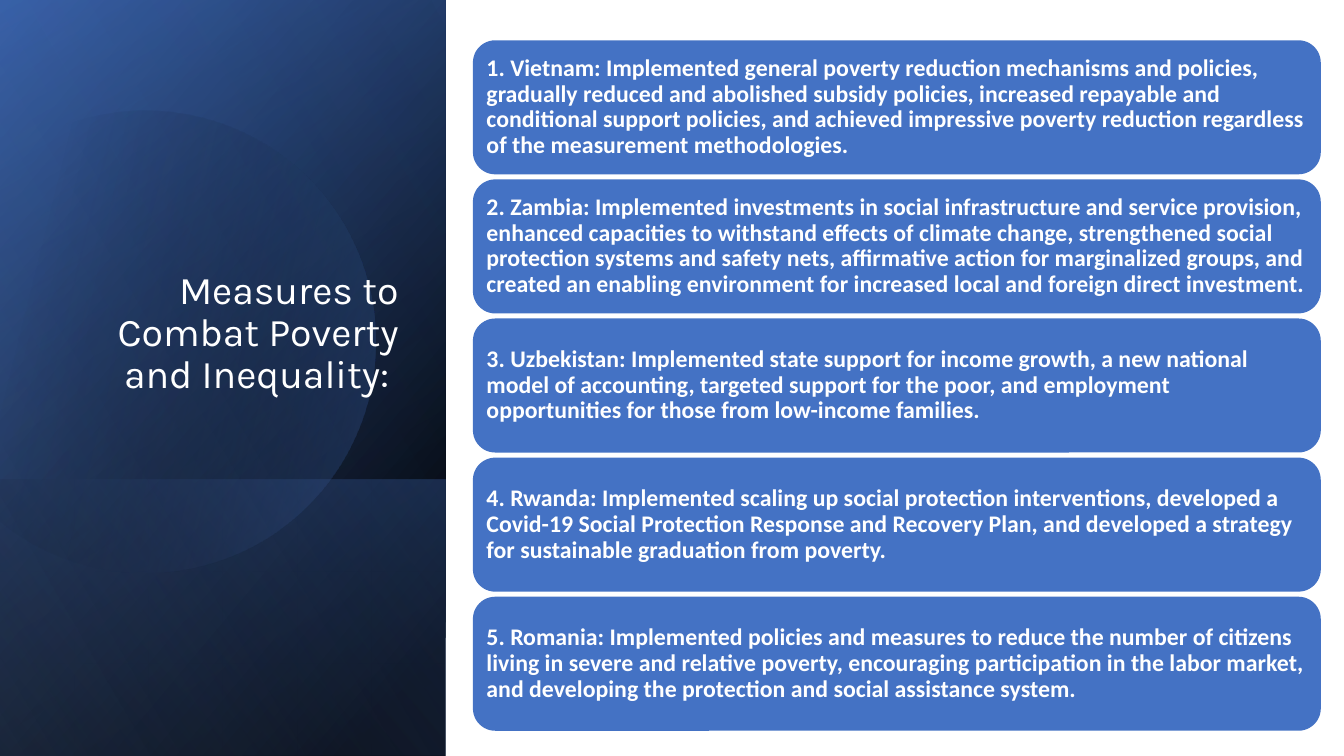
from dataclasses import dataclass
from math import cos, radians, sin, tan

from pptx import Presentation
from pptx.dml.color import RGBColor
from pptx.enum.shapes import MSO_SHAPE
from pptx.enum.text import MSO_ANCHOR, PP_ALIGN
from pptx.oxml.ns import qn
from pptx.oxml.xmlchemy import OxmlElement
from pptx.util import Inches, Pt

RECT, ROUND_RECT = MSO_SHAPE.RECTANGLE, MSO_SHAPE.ROUNDED_RECTANGLE
BOTTOM, MIDDLE = MSO_ANCHOR.BOTTOM, MSO_ANCHOR.MIDDLE
LEFT, RIGHT = PP_ALIGN.LEFT, PP_ALIGN.RIGHT


@dataclass(frozen=True)
class Theme:
    black: str = "000000"
    white: str = "FFFFFF"
    blue: str = "4472C4"
    navy: str = "2F5597"
    pale: str = "8FAADC"
    title_font: str = "Karla"
    body_font: str = "Calibri"
    title_size: int = 28
    body_size: int = 17


T = Theme()
TITLE = "Measures to Combat Poverty and Inequality: "
MEASURES = [
    "1. Vietnam: Implemented general poverty reduction mechanisms and policies, "
    "gradually reduced and abolished subsidy policies, increased repayable and "
    "conditional support policies, and achieved impressive poverty reduction "
    "regardless of the measurement methodologies.",
    "2. Zambia: Implemented investments in social infrastructure and service "
    "provision, enhanced capacities to withstand effects of climate change, "
    "strengthened social protection systems and safety nets, affirmative action "
    "for marginalized groups, and created an enabling environment for increased "
    "local and foreign direct investment.",
    "3. Uzbekistan: Implemented state support for income growth, a new national "
    "model of accounting, targeted support for the poor, and employment "
    "opportunities for those from low-income families.",
    "4. Rwanda: Implemented scaling up social protection interventions, developed "
    "a Covid-19 Social Protection Response and Recovery Plan, and developed a "
    "strategy for sustainable graduation from poverty.",
    "5. Romania: Implemented policies and measures to reduce the number of "
    "citizens living in severe and relative poverty, encouraging participation in "
    "the labor market, and developing the protection and social assistance system.",
]


def paint_gradient(sp, stops, angle):
    """Fill with two (position %, colour, opacity %) stops; angle runs clockwise."""
    sp.shadow.inherit = False
    sp.line.fill.background()
    sp.fill.gradient()
    sp.fill.gradient_angle = 360 - angle
    for stop, (position, colour, _) in zip(sp.fill.gradient_stops, stops):
        stop.position = position / 100
        stop.color.rgb = RGBColor.from_string(colour)
    for clr, (_, _, opacity) in zip(sp._element.spPr.iter(qn("a:srgbClr")), stops):
        if opacity < 100:
            alpha = OxmlElement("a:alpha")
            alpha.set("val", str(opacity * 1000))
            clr.append(alpha)


def write_text(tf, text, font, paragraph, frame):
    for name, value in frame.items():
        setattr(tf, name, value)
    tf.word_wrap = True
    p = tf.paragraphs[0]
    for name, value in paragraph.items():
        setattr(p, name, value)
    r = p.add_run()
    r.text = text
    for name, value in font.items():
        setattr(r.font, name, value)
    r.font.color.rgb = RGBColor.from_string(T.white)


def add_wash(s, x, y, w, h, stops, angle):
    """Cover the box with a gradient rectangle turned a quarter and mirrored."""
    sp = s.shapes.add_shape(RECT, Inches(x + (w - h) / 2), Inches(y + (h - w) / 2),
                            Inches(h), Inches(w))
    sp.rotation = 90
    sp._element.spPr.xfrm.set("flipH", "1")
    paint_gradient(sp, stops, angle)


def bend_lines(sp):
    """Turn each three line segments of a freeform into one Bézier curve."""
    lines = list(sp._element.spPr.iter(qn("a:lnTo")))
    for i in range(0, len(lines), 3):
        curve = OxmlElement("a:cubicBezTo")
        lines[i].addprevious(curve)
        for line in lines[i:i + 3]:
            curve.append(line[0])
            line.getparent().remove(line)


def add_disc(s, cx, cy, radius, angles, rotation):
    """Draw a disc as arcs between the angles in degrees, closed by a chord."""
    def point(angle, pull=0):
        a = radians(angle)
        return (Inches(cx + radius * (cos(a) - pull * sin(a))),
                Inches(cy + radius * (sin(a) + pull * cos(a))))

    builder = s.shapes.build_freeform(*point(angles[0]))
    for start, end in zip(angles, angles[1:]):
        pull = 4 / 3 * tan(radians(end - start) / 4)
        builder.add_line_segments([point(start, pull), point(end, -pull), point(end)],
                                  close=end == angles[-1])
    sp = builder.convert_to_shape()
    bend_lines(sp)
    sp.rotation = rotation
    paint_gradient(sp, [(29, T.black, 0), (100, T.blue, 43)], 30)


def add_title_panel(s, x, y, w, h):
    add_wash(s, x, y, w, h, [(8, T.black, 100), (100, T.navy, 100)], 50)
    add_wash(s, x, y, w, h, [(0, T.black, 0), (99, T.blue, 46)], 30)
    band = 2.74
    add_wash(s, x, y + h - band, w, band, [(2, T.blue, 29), (100, T.black, 30)], 130)
    add_disc(s, x + 1.43, y + 3.35, 2.29, [-118, -90, 0, 90, 150], 343.9)
    add_wash(s, x, y, w, h, [(0, T.black, 0), (99, T.pale, 11)], 120)
    box = s.shapes.add_textbox(Inches(x + 0.64), Inches(y + 1.84), Inches(3.41), Inches(2.62))
    write_text(box.text_frame, TITLE,
               {"name": T.title_font, "size": Pt(T.title_size)},
               {"alignment": RIGHT, "line_spacing": 0.9},
               {"vertical_anchor": BOTTOM, "margin_bottom": Inches(0.52)})


def add_measure_cards(s, x, y, w, h, gap=0.05):
    card_h = (h - gap * (len(MEASURES) - 1)) / len(MEASURES)
    margins = {f"margin_{side}": Inches(0.07) for side in ("left", "top", "right", "bottom")}
    for i, text in enumerate(MEASURES):
        sp = s.shapes.add_shape(ROUND_RECT, Inches(x), Inches(y + i * (card_h + gap)),
                                Inches(w), Inches(card_h))
        sp.shadow.inherit = False
        sp.fill.solid()
        sp.fill.fore_color.rgb = RGBColor.from_string(T.blue)
        sp.line.fill.background()
        write_text(sp.text_frame, text,
                   {"name": T.body_font, "size": Pt(T.body_size), "bold": True},
                   {"alignment": LEFT, "line_spacing": 0.9},
                   {"vertical_anchor": MIDDLE, **margins})


def main():
    prs = Presentation()
    prs.slide_width, prs.slide_height = Inches(13.33), Inches(7.5)
    s = prs.slides.add_slide(prs.slide_layouts[6])
    add_title_panel(s, 0, 0, 4.42, 7.5)
    add_measure_cards(s, 4.69, 0.4, 8.41, 6.85)
    prs.save("out.pptx")


if __name__ == "__main__":
    main()
